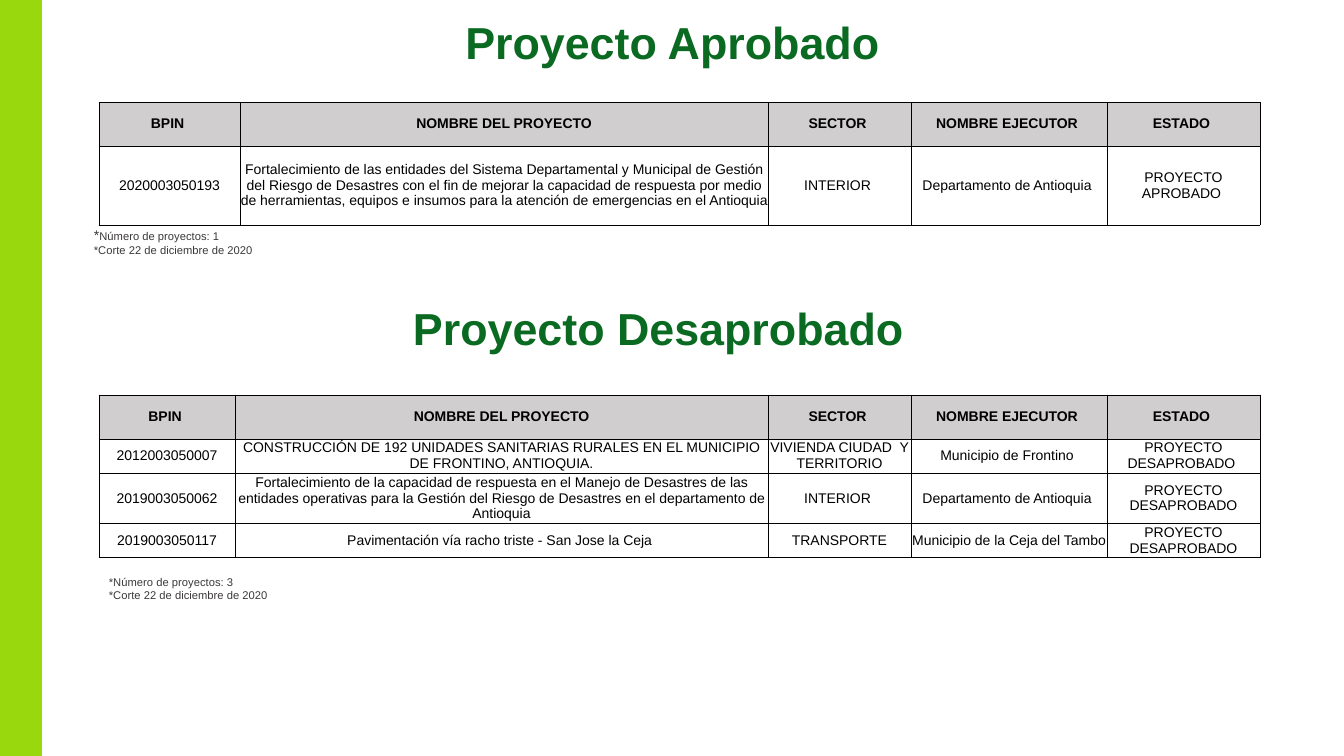
import pptx
import pptx.util
import pptx.dml.color
import pptx.enum.shapes
import pptx.enum.text
import pptx.oxml.ns
from dataclasses import dataclass
from lxml import etree


@dataclass(frozen=True)
class Theme:
    font: str = "Arial"
    title: str = "0A6A21"
    bar: str = "99D80D"
    note: str = "3B3838"
    ink: str = "000000"
    head: str = "D0CECE"
    paper: str = "FFFFFF"
    big: int = 32
    body: int = 10
    small: int = 8
    rule: float = 0.5


THEME = Theme()
SCALE = 914400 / 100.8
HEADS = ["BPIN ", "NOMBRE DEL PROYECTO", "SECTOR ", "NOMBRE EJECUTOR ", "ESTADO "]
CENTER = pptx.enum.text.PP_ALIGN.CENTER


def px(*sizes):
    return [pptx.util.Emu(round(size * SCALE)) for size in sizes]


def rgb(color):
    return pptx.dml.color.RGBColor.from_string(color)


def add_run(para, text, size, color, bold=False):
    run = para.add_run()
    run.text = text
    run.font.name = THEME.font
    run.font.size = pptx.util.Pt(size)
    run.font.bold = bold
    run.font.color.rgb = rgb(color)


def add_box(slide, box):
    frame = slide.shapes.add_textbox(*px(*box)).text_frame
    frame.word_wrap = True
    return frame


def add_bar(slide, box):
    bar = slide.shapes.add_shape(pptx.enum.shapes.MSO_SHAPE.RECTANGLE, *px(*box))
    bar.shadow.inherit = False
    bar.fill.solid()
    bar.fill.fore_color.rgb = rgb(THEME.bar)
    bar.line.fill.background()


def add_title(slide, box, text):
    para = add_box(slide, box).paragraphs[0]
    para.alignment = CENTER
    add_run(para, text, THEME.big, THEME.title, True)


def add_notes(slide, box, count, star):
    frame = add_box(slide, box)
    first = frame.paragraphs[0]
    add_run(first, "*", star, THEME.note)
    add_run(first, f"Número de proyectos: {count}", THEME.small, THEME.note)
    add_run(frame.add_paragraph(), "*Corte 22 de diciembre de 2020",
            THEME.small, THEME.note)


def add_edges(cell):
    props = cell._tc.get_or_add_tcPr()
    name = pptx.oxml.ns.qn
    for side in ("a:lnL", "a:lnR", "a:lnT", "a:lnB"):
        line = etree.SubElement(props, name(side), w=str(pptx.util.Pt(THEME.rule)))
        fill = etree.SubElement(line, name("a:solidFill"))
        etree.SubElement(fill, name("a:srgbClr"), val=THEME.ink)


def fill_cell(cell, text, head):
    cell.margin_left = cell.margin_right = cell.margin_top = cell.margin_bottom = 0
    cell.vertical_anchor = pptx.enum.text.MSO_ANCHOR.MIDDLE
    add_edges(cell)
    cell.fill.solid()
    cell.fill.fore_color.rgb = rgb(THEME.head if head else THEME.paper)
    para = cell.text_frame.paragraphs[0]
    para.alignment = CENTER
    add_run(para, text, THEME.body, THEME.ink, head)


def add_grid(slide, left, top, widths, heights, rows):
    lines = [HEADS] + rows
    box = px(left, top, sum(widths), sum(heights))
    grid = slide.shapes.add_table(len(lines), len(HEADS), *box).table
    grid.horz_banding = False
    for col, width in zip(grid.columns, px(*widths)):
        col.width = width
    for row, height in zip(grid.rows, px(*heights)):
        row.height = height
    for i, line in enumerate(lines):
        for j, text in enumerate(line):
            fill_cell(grid.cell(i, j), text, i == 0)


def main():
    deck = pptx.Presentation()
    deck.slide_width, deck.slide_height = px(1344, 756)
    slide = deck.slides.add_slide(deck.slide_layouts[6])
    add_bar(slide, (0, 0, 42, 756))

    add_title(slide, (129, 10, 1087, 65), "Proyecto Aprobado")
    add_grid(slide, 99, 102, [141, 528, 143, 196, 153], [44, 79], [
        ["2020003050193",
         "Fortalecimiento de las entidades del Sistema Departamental y Municipal "
         "de Gestión del Riesgo de Desastres con el fin de mejorar la capacidad "
         "de respuesta por medio de herramientas, equipos e insumos para la "
         "atención de emergencias en el Antioquia",
         "INTERIOR ", "Departamento de Antioquia ", "PROYECTO APROBADO "],
    ])
    add_notes(slide, (84, 222, 210, 40), 1, THEME.body)

    add_title(slide, (115, 296, 1087, 65), "Proyecto Desaprobado")
    add_grid(slide, 99, 395, [136, 533, 143, 196, 153], [44, 34, 50, 34], [
        ["2012003050007",
         "CONSTRUCCIÓN DE 192 UNIDADES SANITARIAS RURALES EN EL MUNICIPIO "
         "DE FRONTINO, ANTIOQUIA.",
         "VIVIENDA CIUDAD  Y TERRITORIO", "Municipio de Frontino ",
         "PROYECTO DESAPROBADO "],
        ["2019003050062",
         "Fortalecimiento de la capacidad de respuesta en el Manejo de Desastres "
         "de las entidades operativas para la Gestión del Riesgo de Desastres "
         "en el departamento de Antioquia",
         "INTERIOR ", "Departamento de Antioquia ", "PROYECTO DESAPROBADO"],
        ["2019003050117", "Pavimentación vía racho triste - San Jose la Ceja ",
         "TRANSPORTE", "Municipio de la Ceja del Tambo ", "PROYECTO DESAPROBADO"],
    ])
    add_notes(slide, (99, 570, 427, 37), 3, THEME.small)
    deck.save("out.pptx")


if __name__ == "__main__":
    main()
